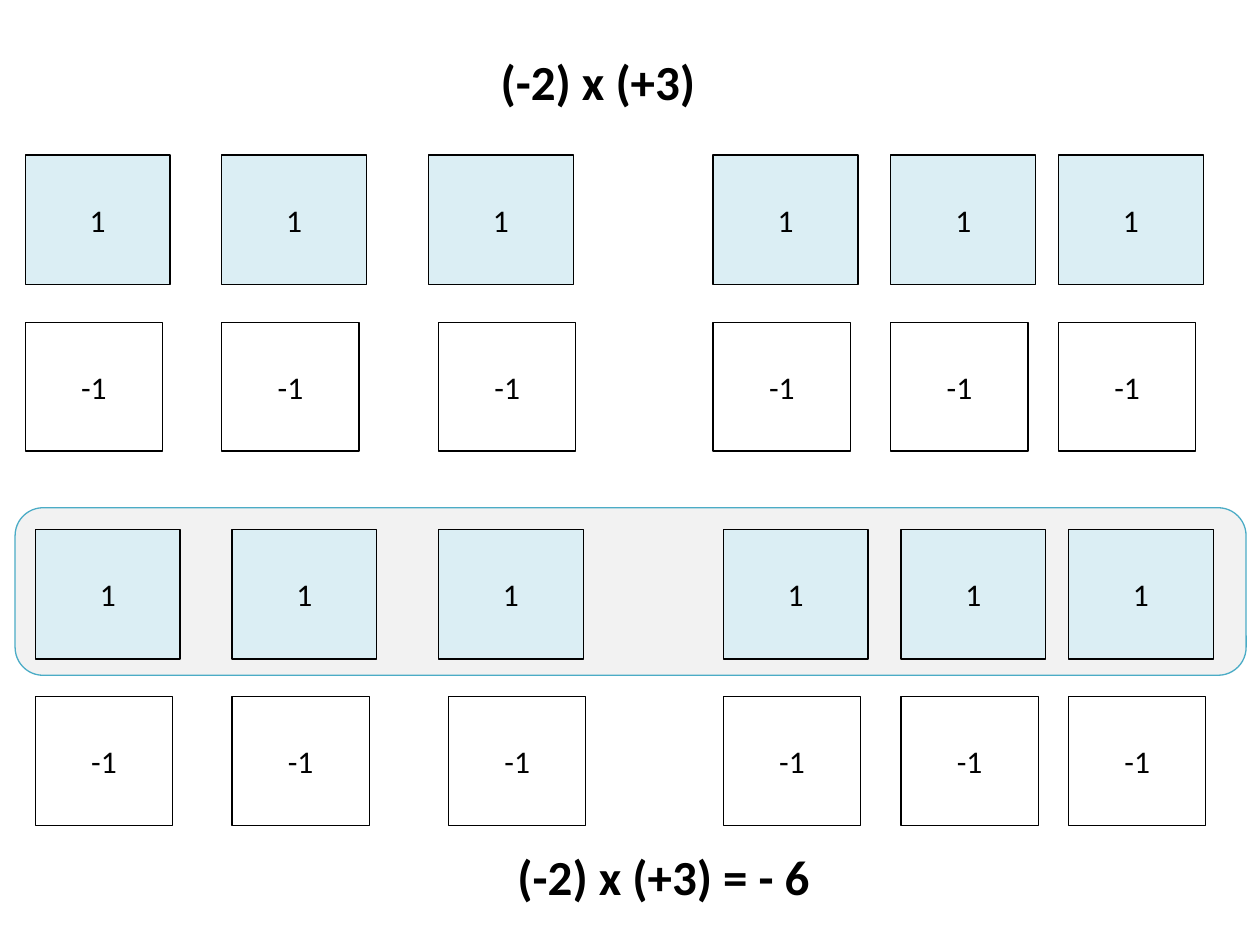
from dataclasses import dataclass

from pptx import Presentation
from pptx.dml.color import RGBColor
from pptx.enum.shapes import MSO_SHAPE as Preset
from pptx.enum.text import MSO_ANCHOR as Anchor, MSO_AUTO_SIZE as AutoSize, PP_ALIGN as Align
from pptx.shapes.autoshape import Shape
from pptx.slide import Slide
from pptx.util import Inches, Pt

FONT = "Calibri"
BLACK, WHITE = "000000", "FFFFFF"
COLUMNS = (0.2, 1.76, 3.4, 5.66, 7.07, 8.4)
NUDGED_COLUMN = 2  # the negative tile in this column sits slightly to the right
NUDGE = 0.08
GROUP_STEP = (0.08, 2.97)  # offset from the upper pair of rows to the lower pair


@dataclass(frozen=True)
class TileRow:
    label: str
    top: float
    width: float
    height: float
    fill: str
    nudge: float


TILE_ROWS = (
    TileRow("1", 1.23, 1.15, 1.03, "DBEEF4", 0),
    TileRow("-1", 2.56, 1.09, 1.02, WHITE, NUDGE),
)


def color(value: str) -> RGBColor:
    return RGBColor.from_string(value)


def write(box: Shape, text: str, size: int, bold: bool = False) -> None:
    """Put one centred, unwrapped line of text in the box."""
    frame = box.text_frame
    frame.text = text
    frame.word_wrap = False
    frame.vertical_anchor = Anchor.MIDDLE
    para = frame.paragraphs[0]
    para.alignment = Align.CENTER
    para.font.name = FONT
    para.font.size = Pt(size)
    para.font.bold = bold
    para.font.color.rgb = color(BLACK)


def write_equation(box: Shape, text: str) -> None:
    write(box, text, 28, bold=True)
    box.text_frame.auto_size = AutoSize.SHAPE_TO_FIT_TEXT


def add_panel(page: Slide, preset: Preset, left: float, top: float,
              width: float, height: float, fill: str, line: str) -> Shape:
    panel = page.shapes.add_shape(
        preset, Inches(left), Inches(top), Inches(width), Inches(height))
    panel.shadow.inherit = False
    panel.fill.solid()
    panel.fill.fore_color.rgb = color(fill)
    panel.line.color.rgb = color(line)
    panel.line.width = Pt(0.75)
    return panel


def add_tiles(page: Slide, row: TileRow, group: int) -> None:
    shift, drop = (group * step for step in GROUP_STEP)
    for column, left in enumerate(COLUMNS):
        nudge = row.nudge if column == NUDGED_COLUMN else 0
        tile = add_panel(page, Preset.RECTANGLE, left + shift + nudge,
                         row.top + drop, row.width, row.height, row.fill, BLACK)
        write(tile, row.label, 18)


def main() -> None:
    deck = Presentation()
    deck.slide_width, deck.slide_height = Inches(10), Inches(7.5)
    page = deck.slides.add_slide(deck.slide_layouts.get_by_name("Title Only"))

    title = page.shapes.title
    title.left, title.top = Inches(3.86), Inches(0.36)
    title.width, title.height = Inches(1.77), Inches(0.57)
    write_equation(title, "(-2) x (+3)")

    add_panel(page, Preset.ROUNDED_RECTANGLE, 0.12, 4.03, 9.77, 1.33, "F2F2F2", "4BACC6")
    for group in range(2):
        for row in TILE_ROWS:
            add_tiles(page, row, group)

    result = page.shapes.add_textbox(Inches(3.99), Inches(6.67), Inches(2.55), Inches(0.57))
    write_equation(result, "(-2) x (+3) = - 6")

    deck.save("out.pptx")


if __name__ == "__main__":
    main()
